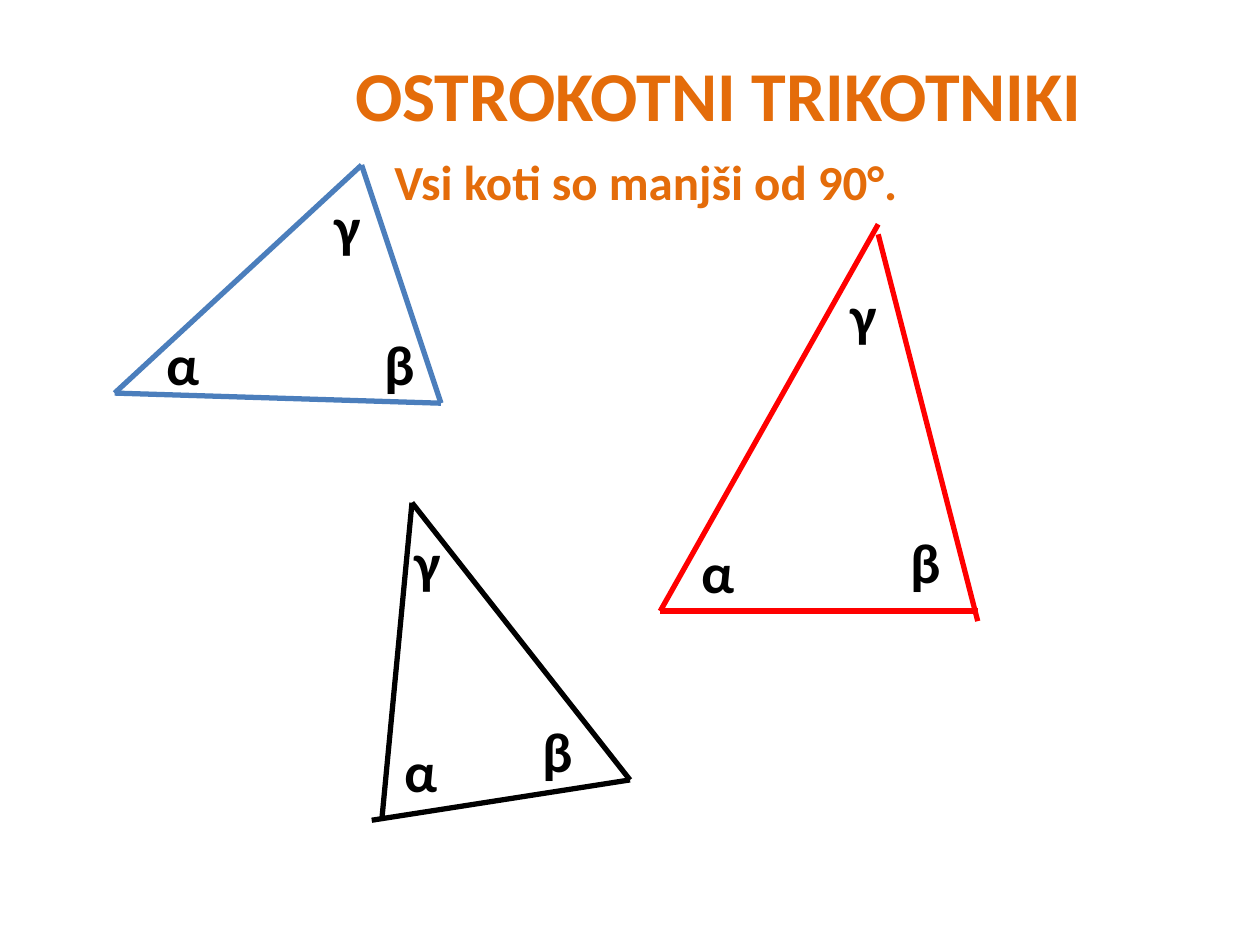
from dataclasses import dataclass
from lxml.etree import SubElement
from pptx import Presentation
from pptx.dml.color import RGBColor
from pptx.enum.shapes import MSO_CONNECTOR as Connector
from pptx.enum.text import MSO_ANCHOR as Anchor, MSO_AUTO_SIZE as AutoSize, PP_ALIGN as Align
from pptx.oxml.ns import qn
from pptx.util import Emu, Pt


@dataclass(frozen=True)
class Theme:
    font: str = "Calibri"
    orange: str = "E46C0A"
    blue: str = "4B7EBC"
    red: str = "FF0000"
    black: str = "000000"
    title_size: int = 40
    rule_size: int = 28
    angle_size: int = 32
    line_width: int = 3


theme = Theme()
PX = 9144


def px(*lengths):
    return [Emu(length * PX) for length in lengths]


def write_text(shape, text, *, box, size, color, wrap=False):
    shape.left, shape.top, shape.width, shape.height = px(*box)
    frame = shape.text_frame
    frame.text = text
    frame.word_wrap = wrap
    frame.auto_size = AutoSize.SHAPE_TO_FIT_TEXT
    frame.vertical_anchor = Anchor.TOP
    paragraph = frame.paragraphs[0]
    paragraph.alignment = Align.LEFT
    paragraph.space_before = Pt(0)
    font = paragraph.runs[0].font
    font.name = theme.font
    font.size = Pt(size)
    font.bold = True
    font.color.rgb = RGBColor.from_string(color)


presentation = Presentation()
presentation.slide_width, presentation.slide_height = px(1000, 750)
slide = presentation.slides.add_slide(presentation.slide_layouts[0])

triangles = [
    (theme.blue,
     [(91, 312, 287, 131), (350, 320, 91, 312), (350, 320, 287, 131)],
     {"α": (122, 257, 47), "β": (295, 257, 45), "γ": (256, 147, 41)}),
    (theme.red,
     [(524, 485, 697, 178), (697, 186, 776, 493), (524, 485, 776, 485)],
     {"α": (547, 422, 47), "β": (713, 414, 45), "γ": (665, 218, 41)}),
    (theme.black,
     [(303, 651, 327, 399), (327, 399, 500, 619), (295, 651, 500, 619)],
     {"α": (311, 580, 47), "β": (421, 564, 45), "γ": (319, 414, 45)}),
]

for color, sides, angles in triangles:
    for side in sides:
        line = slide.shapes.add_connector(Connector.STRAIGHT, *px(*side))
        line.line.color.rgb = RGBColor.from_string(color)
        line.line.width = Pt(theme.line_width)
        SubElement(line._element.spPr, qn("a:effectLst"))
    for angle, (left, top, width) in angles.items():
        box = (left, top, width, 64)
        label = slide.shapes.add_textbox(*px(*box))
        write_text(label, angle, box=box, size=theme.angle_size, color=theme.black)

write_text(slide.shapes.title, "OSTROKOTNI TRIKOTNIKI", box=(272, 36, 602, 77),
           size=theme.title_size, color=theme.orange)
write_text(slide.placeholders[1], "Vsi koti so manjši od 90°.", box=(303, 115, 424, 57),
           size=theme.rule_size, color=theme.orange)

presentation.save("out.pptx")
